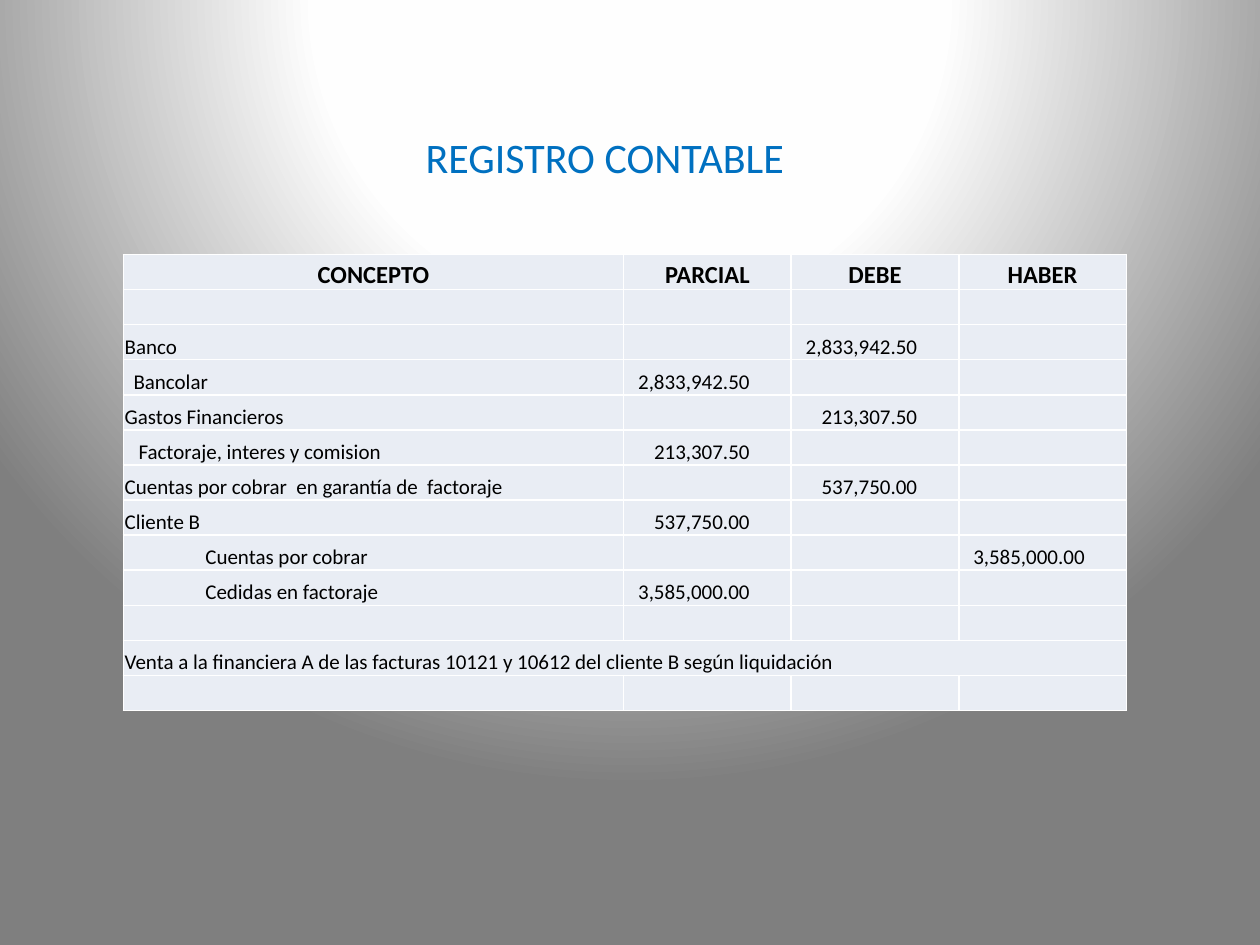
from lxml import etree
from pptx import Presentation
from pptx import util as u
from pptx.dml.color import RGBColor
from pptx.enum import text
from pptx.oxml import parse_xml

BLUE = RGBColor(0x00, 0x70, 0xC0)
BLACK = RGBColor(0x00, 0x00, 0x00)
PALE = RGBColor(0xE9, 0xED, 0xF4)
WHITE = RGBColor(0xFF, 0xFF, 0xFF)
SILVER = RGBColor(0xFE, 0xFE, 0xFE)
GREY = RGBColor(0x7F, 0x7F, 0x7F)

FONT = "Calibri"
NAMESPACE = "http://schemas.openxmlformats.org/drawingml/2006/main"
COLUMN_WIDTHS = (3.97, 1.33, 1.33, 1.33)
EDGE = 0.01
AMOUNT_MARGIN = 0.33
HEADINGS = ("CONCEPTO", "PARCIAL", "DEBE", "HABER")
NOTE = "Venta a la financiera A de las facturas 10121 y 10612 del cliente B según liquidación"
ENTRIES = (
    (0, "", "", "", ""),
    (0, "Banco", "", "2,833,942.50", ""),
    (0.07, "Bancolar", "2,833,942.50", "", ""),
    (0, "Gastos Financieros", "", "213,307.50", ""),
    (0.11, "Factoraje, interes y comision", "213,307.50", "", ""),
    (0, "Cuentas por cobrar  en garantía de  factoraje", "", "537,750.00", ""),
    (0, "Cliente B", "537,750.00", "", ""),
    (0.64, "Cuentas por cobrar", "", "", "3,585,000.00"),
    (0.64, "Cedidas en factoraje", "3,585,000.00", "", ""),
    (0, "", "", "", ""),
    (0, NOTE, "", "", ""),
    (0, "", "", "", ""),
)


def paint_background(page):
    """Fill the page with a round gradient centred above the middle."""
    page.background.fill.solid()
    solid = page.element.find(f".//{{{NAMESPACE}}}solidFill")
    stops = "".join(
        f'<a:gs pos="{place * 1000}"><a:srgbClr val="{color}"/></a:gs>'
        for place, color in ((0, WHITE), (40, SILVER), (100, GREY))
    )
    gradient = parse_xml(
        f'<a:gradFill xmlns:a="{NAMESPACE}" rotWithShape="1"><a:gsLst>{stops}</a:gsLst>'
        '<a:path path="circle"><a:fillToRect l="50000" t="-80000" r="50000" b="180000"/>'
        "</a:path></a:gradFill>"
    )
    solid.getparent().replace(solid, gradient)


def style_paragraph(paragraph, size, color, align, bold=False):
    """Set the alignment and font of one paragraph."""
    paragraph.alignment = align
    font = paragraph.font
    font.name, font.size, font.bold = FONT, u.Pt(size), bold
    font.color.rgb = color


def write_title(page, words):
    """Place the words in the title placeholder."""
    box = page.shapes.title
    box.left, box.top, box.width, box.height = map(u.Inches, (1.3, 0.99, 7, 0.5))
    frame = box.text_frame
    frame.text = words
    frame.vertical_anchor = text.MSO_ANCHOR.MIDDLE
    frame.auto_size = text.MSO_AUTO_SIZE.NONE
    style_paragraph(frame.paragraphs[0], 24, BLUE, text.PP_ALIGN.CENTER)


def outline_cell(cell):
    """Draw a thin white line on each side of a cell."""
    properties = cell._tc.get_or_add_tcPr()
    for index, side in enumerate(("lnL", "lnR", "lnT", "lnB")):
        line = etree.Element(f"{{{NAMESPACE}}}{side}", w=str(u.Pt(1)))
        fill = etree.SubElement(line, f"{{{NAMESPACE}}}solidFill")
        etree.SubElement(fill, f"{{{NAMESPACE}}}srgbClr", val=str(WHITE))
        properties.insert(index, line)


def write_cell(cell, words, align, size=12, bold=False, left=EDGE, right=EDGE):
    """Fill, outline and write one table cell."""
    cell.fill.solid()
    cell.fill.fore_color.rgb = PALE
    outline_cell(cell)
    cell.vertical_anchor = text.MSO_ANCHOR.BOTTOM
    cell.margin_left, cell.margin_right = u.Inches(left), u.Inches(right)
    cell.margin_top, cell.margin_bottom = u.Inches(EDGE), 0
    paragraph = cell.text_frame.paragraphs[0]
    if words:
        paragraph.text = words
    else:
        paragraph._p.get_or_add_endParaRPr().set("sz", str(size * 100))
    style_paragraph(paragraph, size, BLACK, align, bold)


def add_ledger(page):
    """Add the ledger table with its headings, entries and note."""
    row_count = len(ENTRIES) + 1
    table = page.shapes.add_table(
        row_count, len(HEADINGS), u.Inches(0.98), u.Inches(2.02),
        u.Inches(sum(COLUMN_WIDTHS)), u.Inches(3.62),
    ).table
    table.first_row = table.horz_banding = False
    for column, width in zip(table.columns, COLUMN_WIDTHS):
        column.width = u.Inches(width)
    for index, heading in enumerate(HEADINGS):
        write_cell(table.cell(0, index), heading, text.PP_ALIGN.CENTER, 14, True)
    for row, (indent, concept, *amounts) in enumerate(ENTRIES, 1):
        write_cell(table.cell(row, 0), concept, text.PP_ALIGN.LEFT, left=EDGE + indent)
        for index, amount in enumerate(amounts, 1):
            write_cell(table.cell(row, index), amount, text.PP_ALIGN.RIGHT, right=AMOUNT_MARGIN)
        if concept == NOTE:
            table.cell(row, 0).merge(table.cell(row, len(HEADINGS) - 1))


def main():
    """Build the slide and save the deck."""
    deck = Presentation()
    deck.slide_width, deck.slide_height = u.Inches(10), u.Inches(7.5)
    page = deck.slides.add_slide(deck.slide_layouts[5])
    paint_background(page)
    write_title(page, "REGISTRO CONTABLE")
    add_ledger(page)
    deck.save("out.pptx")


if __name__ == "__main__":
    main()
